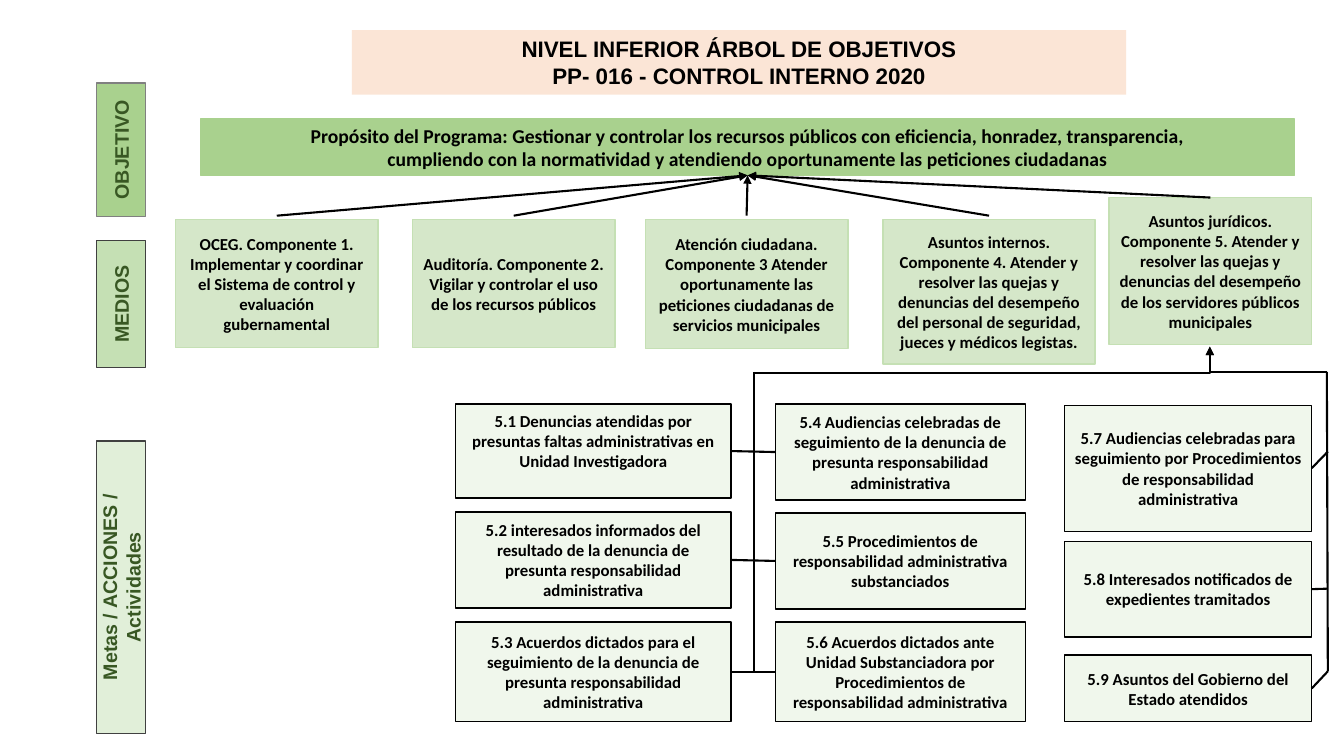
from dataclasses import dataclass

import lxml.etree
import pptx
import pptx.dml.color
import pptx.enum.shapes
import pptx.enum.text
import pptx.oxml.ns
import pptx.util

Inches = pptx.util.Inches
SHAPES = pptx.enum.shapes.MSO_SHAPE
CONNECTORS = pptx.enum.shapes.MSO_CONNECTOR


@dataclass(frozen=True)
class Theme:
    """Colours, fonts and type sizes of the objective tree."""
    ink: str = "000000"
    label_ink: str = "385723"
    peach: str = "FBE5D6"
    green: str = "A9D18E"
    light_green: str = "C5E0B4"
    deep_green: str = "70AD47"
    grey: str = "808080"
    dark_grey: str = "404040"
    heading_font: str = "Arial"
    body_font: str = "Calibri"
    title_size: int = 16
    label_size: int = 14
    body_size: int = 12
    thin: float = 1
    thick: float = 1.5


THEME = Theme()

LEVELS = [
    ("OBJETIVO", (0.54, 1.24, 1.32, 0.49), THEME.green, THEME.grey, 100),
    ("MEDIOS", (0.57, 2.77, 1.26, 0.49), THEME.light_green, THEME.dark_grey, 100),
    ("Metas / ACCIONES / Actividades", (-0.25, 5.58, 2.9, 0.49),
     THEME.light_green, THEME.dark_grey, 50),
]

COMPONENTS = [
    ("OCEG. Componente 1. Implementar y coordinar el Sistema de control y "
     "evaluación gubernamental", (1.74, 2.18, 2.01, 1.27)),
    ("Auditoría. Componente 2. Vigilar y controlar el uso de los recursos públicos",
     (4.09, 2.18, 2.01, 1.27)),
    ("Atención ciudadana. Componente 3 Atender oportunamente las peticiones "
     "ciudadanas de servicios municipales", (6.4, 2.18, 2.01, 1.28)),
    ("Asuntos internos. Componente 4. Atender y resolver las quejas y denuncias del "
     "desempeño del personal de seguridad, jueces y médicos legistas.",
     (8.76, 2.18, 2.1, 1.43)),
    ("Asuntos jurídicos. Componente 5. Atender y resolver las quejas y denuncias del "
     "desempeño de los servidores públicos municipales", (11, 1.96, 2.01, 1.46)),
]

ACTIVITY_COLUMNS = [
    (4.52, 2.73, [
        ("5.1 Denuncias atendidas por presuntas faltas administrativas en Unidad "
         "Investigadora", 4.01, 0.93),
        ("5.2 interesados informados del resultado de la denuncia de presunta "
         "responsabilidad administrativa", 5.08, 0.95),
        ("5.3 Acuerdos dictados para el seguimiento de la denuncia de presunta "
         "responsabilidad administrativa", 6.17, 0.99)]),
    (7.69, 2.48, [
        ("5.4 Audiencias celebradas de seguimiento de la denuncia de presunta "
         "responsabilidad administrativa", 4.01, 0.95),
        ("5.5 Procedimientos de responsabilidad administrativa substanciados", 5.09, 0.95),
        ("5.6 Acuerdos dictados ante Unidad Substanciadora por Procedimientos de "
         "responsabilidad administrativa", 6.17, 0.99)]),
    (10.56, 2.45, [
        ("5.7 Audiencias celebradas para seguimiento por Procedimientos de "
         "responsabilidad administrativa", 4.02, 1.25),
        ("5.8 Interesados notificados de expedientes tramitados", 5.37, 0.95),
        ("5.9 Asuntos del Gobierno del Estado atendidos", 6.5, 0.66)]),
]


def rgb(code):
    """Turn a hex code into a colour."""
    return pptx.dml.color.RGBColor.from_string(code)


def add_xml_child(parent, tag, **attributes):
    """Append an element with the given attributes."""
    lxml.etree.SubElement(parent, pptx.oxml.ns.qn(tag), attributes)


def find_xml(shape, tag):
    """Find the first element of a kind in a shape's properties."""
    return shape._element.spPr.find(".//" + pptx.oxml.ns.qn(tag))


def add_box(page, text, place, fill, line=None, opacity=100, size=THEME.body_size,
            font=THEME.body_font, ink=THEME.ink, kind=SHAPES.FLOWCHART_PROCESS):
    """Add a filled box with bold centred text."""
    box = page.shapes.add_shape(kind, *map(Inches, place))
    box.shadow.inherit = False
    box.fill.solid()
    box.fill.fore_color.rgb = rgb(fill)
    if opacity < 100:
        add_xml_child(find_xml(box, "a:srgbClr"), "a:alpha", val=str(opacity * 1000))
    if line:
        box.line.color.rgb = rgb(line)
        box.line.width = pptx.util.Pt(THEME.thin)
    else:
        box.line.fill.background()
    frame = box.text_frame
    frame.word_wrap = True
    frame.vertical_anchor = pptx.enum.text.MSO_ANCHOR.MIDDLE
    frame.text = text
    for para in frame.paragraphs:
        para.alignment = pptx.enum.text.PP_ALIGN.CENTER
        for span in para.runs:
            span.font.name = font
            span.font.size = pptx.util.Pt(size)
            span.font.bold = True
            span.font.color.rgb = rgb(ink)
    return box


def add_line(page, start, end, arrow=False, kind=CONNECTORS.STRAIGHT):
    """Add a black connector, with an arrowhead at its end if asked."""
    line = page.shapes.add_connector(kind, *map(Inches, start + end))
    line.line.color.rgb = rgb(THEME.ink)
    line.line.width = pptx.util.Pt(THEME.thick)
    if arrow:
        add_xml_child(find_xml(line, "a:ln"), "a:tailEnd", type="triangle")
    add_xml_child(line._element.spPr, "a:effectLst")
    return line


def add_corner_arrow(page, start, end):
    """Add an arrow that turns one right angle."""
    arrow = add_line(page, start, end, True, CONNECTORS.ELBOW)
    find_xml(arrow, "a:prstGeom").set("prst", "bentConnector2")


def add_components(page, purpose):
    """Add the component boxes and their arrows to the purpose."""
    for text, place in COMPONENTS:
        box = add_box(page, text, place, THEME.deep_green, THEME.light_green, 29)
        left, top, width, _ = place
        joined = top < 2
        start = (left + width / 2, top if joined else 2.14)
        arrow = add_line(page, start, (7.41, 1.74), True)
        if joined:
            arrow.begin_connect(box, 0)
        arrow.end_connect(purpose, 2)


def add_activities(page):
    """Add the columns of activity boxes and return them by column."""
    return [[add_box(page, text, (left, top, width, height),
                     THEME.light_green, THEME.ink, 25)
             for text, top, height in activities]
            for left, width, activities in ACTIVITY_COLUMNS]


def add_activity_lines(page, columns):
    """Join the activities to their trunks and the trunks to component 5."""
    investigation, hearings, followup = columns
    add_line(page, (7.48, 3.69), (7.48, 6.66))
    for left_box, right_box in zip(investigation, hearings):
        link = add_line(page, (7.69, 4.48), (7.25, 4.48))
        link.begin_connect(right_box, 1)
        link.end_connect(left_box, 3)
    add_line(page, (13.16, 3.69), (13.17, 6.66))
    for box, height in zip(followup, (4.48, 5.84, 6.66)):
        link = add_line(page, (13.17, height), (13.01, height))
        link.end_connect(box, 3)
    add_corner_arrow(page, (7.47, 3.7), (12, 3.44))
    add_corner_arrow(page, (13.16, 3.69), (12, 3.44))


def main():
    """Build the objective tree and save it."""
    deck = pptx.Presentation()
    deck.slide_width, deck.slide_height = Inches(13.33), Inches(7.5)
    page = deck.slides.add_slide(deck.slide_layouts[6])

    add_box(page, "NIVEL INFERIOR ÁRBOL DE OBJETIVOS\nPP- 016 - CONTROL INTERNO 2020",
            (3.49, 0.3, 7.68, 0.64), THEME.peach, size=THEME.title_size,
            font=THEME.heading_font, kind=SHAPES.RECTANGLE)
    for text, place, fill, line, opacity in LEVELS:
        label = add_box(page, text, place, fill, line, opacity, THEME.label_size,
                        THEME.heading_font, THEME.label_ink)
        label.rotation = 270
    purpose = add_box(
        page,
        "Propósito del Programa: Gestionar y controlar los recursos públicos con "
        "eficiencia, honradez, transparencia,\ncumpliendo con la normatividad y "
        "atendiendo oportunamente las peticiones ciudadanas",
        (1.99, 1.18, 10.85, 0.56), THEME.green, THEME.green, size=THEME.label_size)
    add_components(page, purpose)
    columns = add_activities(page)
    columns[0][0].text_frame.margin_bottom = Inches(0.25)
    add_activity_lines(page, columns)
    deck.save("out.pptx")


if __name__ == "__main__":
    main()
